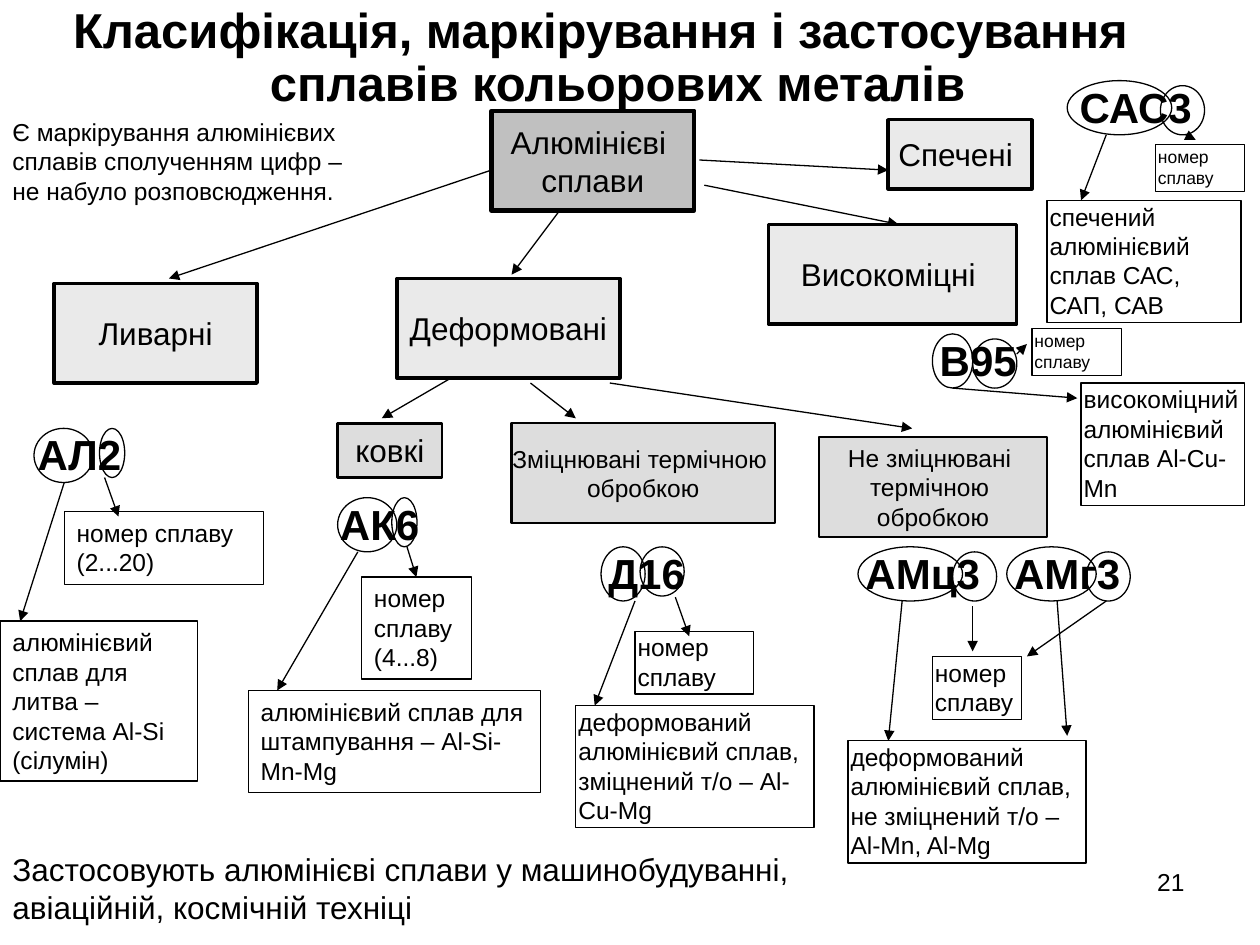
from lxml.etree import SubElement
from pptx import Presentation
from pptx.dml.color import RGBColor
from pptx.enum.shapes import MSO_CONNECTOR, MSO_SHAPE
from pptx.enum.text import MSO_ANCHOR, MSO_AUTO_SIZE, PP_ALIGN
from pptx.oxml.ns import qn
from pptx.util import Inches, Pt

BLACK = "000000"
ROOT_FILL, BRANCH_FILL, SUBTYPE_FILL = "C0C0C0", "EAEAEA", "DDDDDD"
HANGING = 0.38
WIDE_INSETS = (0.1, 0.05)
TIGHT_INSETS = (0.02, 0.01)


def color(hex_value):
    return RGBColor.from_string(hex_value)


def write(frame, text, size=14, bold=False, align=PP_ALIGN.LEFT, anchor=MSO_ANCHOR.TOP,
          insets=WIDE_INSETS, wrap=True, grow=False, hanging=0, spacing=None):
    frame.margin_left = frame.margin_right = Inches(insets[0])
    frame.margin_top = frame.margin_bottom = Inches(insets[1])
    frame.vertical_anchor = anchor
    frame.word_wrap = wrap
    frame.auto_size = MSO_AUTO_SIZE.SHAPE_TO_FIT_TEXT if grow else MSO_AUTO_SIZE.NONE
    for index, line in enumerate(text.split("\n")):
        paragraph = frame.add_paragraph() if index else frame.paragraphs[0]
        paragraph.alignment = align
        paragraph.line_spacing = spacing
        if hanging:
            properties = paragraph._p.get_or_add_pPr()
            properties.set("marL", str(Inches(hanging)))
            properties.set("indent", str(-Inches(hanging)))
        run = paragraph.add_run()
        run.text = line
        run.font.name = "Arial"
        run.font.size = Pt(size)
        run.font.bold = bold
        run.font.color.rgb = color(BLACK)


def add_title(slide, text):
    title = slide.shapes.title
    title.left, title.top = Inches(0), Inches(0)
    title.width, title.height = Inches(9.53), Inches(0.9)
    write(title.text_frame, text, size=28, bold=True, align=PP_ALIGN.CENTER,
          hanging=HANGING, spacing=0.9)


def add_text(slide, area, text, **text_format):
    box = slide.shapes.add_textbox(*map(Inches, area))
    write(box.text_frame, text, **text_format)


def add_outline(slide, kind, area, fill=None, weight=0.75):
    outline = slide.shapes.add_shape(kind, *map(Inches, area))
    outline.shadow.inherit = False
    outline.line.color.rgb = color(BLACK)
    outline.line.width = Pt(weight)
    if fill:
        outline.fill.solid()
        outline.fill.fore_color.rgb = color(fill)
    else:
        outline.fill.background()
    return outline


def add_category(slide, area, text, fill, weight, size=18):
    category = add_outline(slide, MSO_SHAPE.RECTANGLE, area, fill, weight)
    write(category.text_frame, text, size=size, align=PP_ALIGN.CENTER,
          anchor=MSO_ANCHOR.MIDDLE, wrap=False)


def add_note(slide, area, text, insets=TIGHT_INSETS, size=14):
    note = add_outline(slide, MSO_SHAPE.RECTANGLE, area)
    write(note.text_frame, text, size=size, insets=insets, grow=True)
    return note


def add_grade(slide, area, text, rings):
    for ring in rings:
        add_outline(slide, MSO_SHAPE.OVAL, ring)
    add_text(slide, area, text, size=24, bold=True, hanging=HANGING, spacing=0.9)


def add_arrow(slide, x1, y1, x2, y2):
    arrow = slide.shapes.add_connector(
        MSO_CONNECTOR.STRAIGHT, *map(Inches, (x1, y1, x2, y2)))
    arrow.line.color.rgb = color(BLACK)
    arrow.line.width = Pt(0.75)
    SubElement(arrow.line._get_or_add_ln(), qn("a:tailEnd"), type="triangle")
    SubElement(arrow._element.spPr, qn("a:effectLst"))
    return arrow


def main():
    presentation = Presentation()
    presentation.slide_width, presentation.slide_height = Inches(10), Inches(7.5)
    slide = presentation.slides.add_slide(presentation.slide_layouts[5])
    add_title(slide, "Класифікація, маркірування і застосування сплавів кольорових металів ")

    classification_arrows = [
        (3.9, 1.35, 1.34, 2.21), (4.45, 1.66, 4.06, 2.18),
        (5.59, 1.47, 7.13, 1.78), (5.55, 1.27, 7.05, 1.35),
        (3.58, 3, 3.03, 3.32), (4.21, 3.04, 4.57, 3.32), (4.84, 3.04, 7.24, 3.4),
    ]
    grade_arrows = [
        (0.83, 3.79, 0.94, 4.1), (0.51, 3.83, 0.16, 4.93),
        (2.84, 4.38, 2.2, 5.48),
        (5.36, 4.74, 5.47, 5.05), (5.04, 4.77, 4.72, 5.6),
        (7.72, 4.81, 7.72, 5.17), (7.16, 4.77, 7.05, 5.88),
        (8.78, 4.77, 8.15, 5.21), (8.39, 4.77, 8.47, 5.84),
        (9.41, 1.07, 9.49, 1.11), (8.78, 1.07, 8.58, 1.59),
        (8.07, 2.81, 8.15, 2.73), (7.56, 3.08, 8.55, 3.16),
    ]
    for ends in classification_arrows + grade_arrows:
        add_arrow(slide, *ends)

    add_category(slide, (3.9, 0.88, 1.61, 0.79), "Алюмінієві \nсплави", ROOT_FILL, 2.5)
    for area, text in [
        ((0.43, 2.25, 1.61, 0.79), "Ливарні"),
        ((3.15, 2.21, 1.77, 0.79), "Деформовані"),
        ((6.1, 1.78, 1.97, 0.79), "Високоміцні "),
        ((7.05, 0.95, 1.14, 0.55), "Спечені "),
    ]:
        add_category(slide, area, text, BRANCH_FILL, 2)
    for area, text, weight, size in [
        ((2.68, 3.36, 0.83, 0.43), "ковкі", 1.5, 18),
        ((4.06, 3.36, 2.09, 0.79), "Зміцнювані термічною \nобробкою", 1.25, 14),
        ((6.5, 3.47, 1.81, 0.79), "Не зміцнювані \nтермічною \nобробкою", 1.25, 14),
    ]:
        add_category(slide, area, text, SUBTYPE_FILL, weight, size)

    for area, text, rings in [
        ((0.2, 3.4, 0.95, 0.46), "АЛ2", [(0.27, 3.4, 0.47, 0.43), (0.79, 3.4, 0.2, 0.39)]),
        ((2.6, 3.95, 0.87, 0.46), "АК6", [(2.68, 3.95, 0.47, 0.43), (3.11, 3.95, 0.2, 0.39)]),
        ((4.73, 4.34, 0.87, 0.46), "Д16", [(4.77, 4.34, 0.35, 0.43), (5.08, 4.34, 0.35, 0.39)]),
        ((6.77, 4.34, 1.18, 0.46), "АМц3", [(6.81, 4.34, 0.83, 0.43), (7.56, 4.38, 0.35, 0.39)]),
        ((7.95, 4.34, 1.06, 0.46), "АМг3", [(7.99, 4.34, 0.71, 0.43), (8.62, 4.38, 0.35, 0.39)]),
        ((8.47, 0.64, 1.26, 0.46), "САС3", [(8.47, 0.64, 0.83, 0.43), (9.21, 0.68, 0.35, 0.39)]),
        ((7.36, 2.65, 0.9, 0.46), "В95", [(7.4, 2.65, 0.32, 0.43), (7.72, 2.69, 0.35, 0.39)]),
    ]:
        add_grade(slide, area, text, rings)

    for area, text in [
        ((0.51, 4.06, 1.58, 0.58), "номер сплаву (2...20)"),
        ((0, 4.93, 1.57, 1.27), "алюмінієвий сплав для литва – система Al-Si (сілумін)"),
        ((1.97, 5.48, 2.32, 0.81), "алюмінієвий сплав для штампування – Al-Si-Mn-Mg"),
    ]:
        add_note(slide, area, text, WIDE_INSETS)
    forging_number = add_note(slide, (2.87, 4.58, 0.87, 0.81),
                              "номер сплаву (4...8)", WIDE_INSETS)
    add_arrow(slide, 3.23, 4.34, 3.31, 4.58).end_connect(forging_number, 0)

    for area, text in [
        ((4.57, 5.6, 1.89, 0.97), "деформований алюмінієвий сплав, зміцнений т/о – Al-Cu-Mg"),
        ((6.73, 5.88, 1.89, 0.97),
         "деформований алюмінієвий сплав, не зміцнений т/о – Al-Mn, Al-Mg"),
        ((8.31, 1.59, 1.54, 0.97), "спечений алюмінієвий сплав САС, САП, САВ"),
        ((8.58, 3.04, 1.3, 0.97), "високоміцний алюмінієвий сплав Аl-Сu-Мn"),
    ]:
        add_note(slide, area, text)
    for area, size in [
        ((5.04, 5.01, 0.94, 0.5), 14), ((7.4, 5.21, 0.71, 0.5), 14),
        ((9.17, 1.15, 0.71, 0.37), 10), ((8.19, 2.61, 0.71, 0.37), 10),
    ]:
        add_note(slide, area, "номер сплаву", size=size)

    add_text(slide, (0, 0.88, 2.91, 0.8),
             "Є маркірування алюмінієвих сплавів сполученням цифр – не набуло розповсюдження.",
             grow=True)
    add_text(slide, (0, 6.7, 6.54, 0.7),
             "Застосовують алюмінієві сплави у машинобудуванні, авіаційній, космічній техніці",
             size=18, grow=True)
    add_text(slide, (7.17, 6.83, 2.33, 0.52), "21", align=PP_ALIGN.RIGHT)

    presentation.save("out.pptx")


if __name__ == "__main__":
    main()
